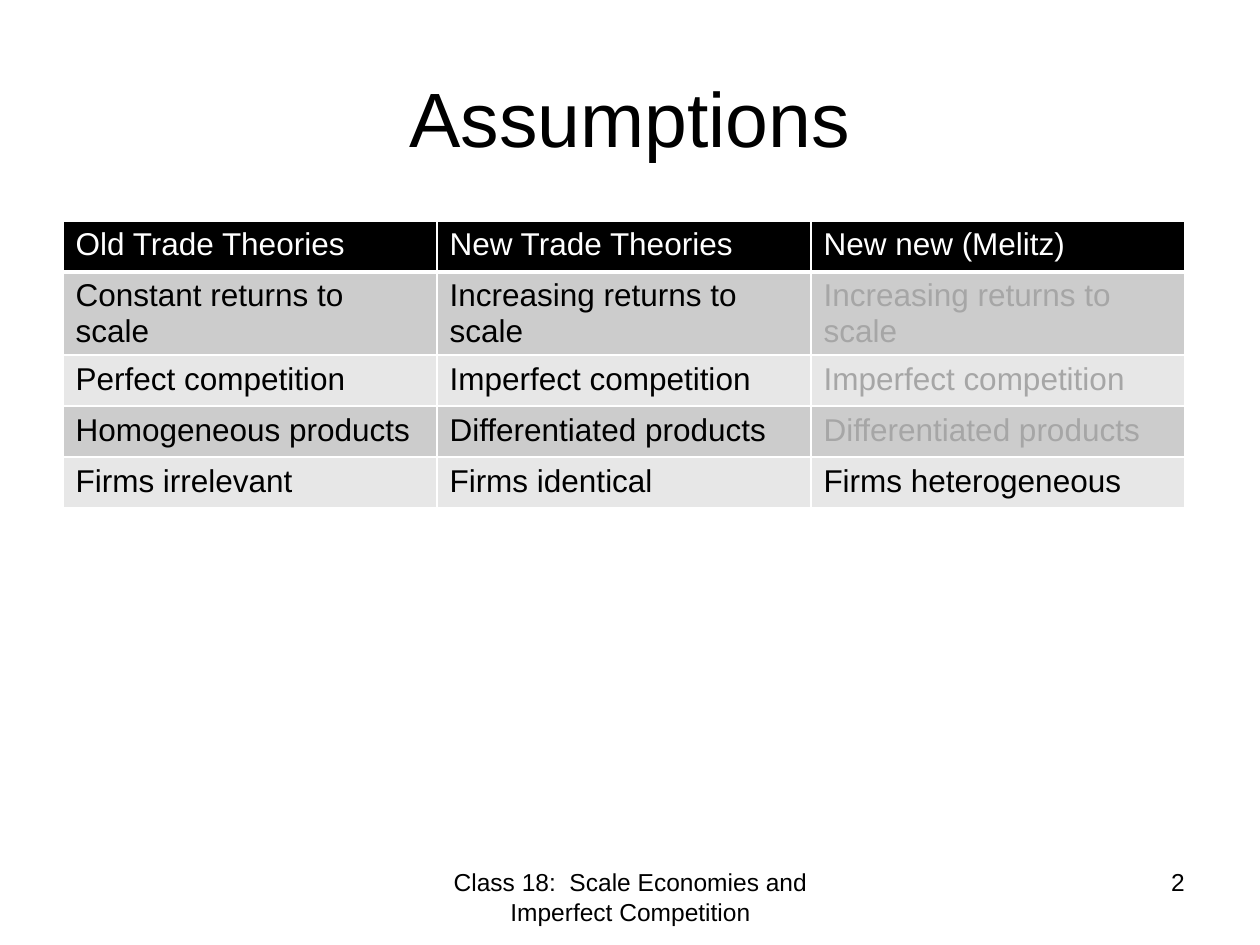
from lxml import etree
from pptx import Presentation
from pptx.dml.color import RGBColor
from pptx.enum.text import MSO_ANCHOR, PP_ALIGN
from pptx.oxml.ns import qn
from pptx.util import Emu, Pt

MIDDLE = MSO_ANCHOR.MIDDLE
LEFT, CENTER, RIGHT = PP_ALIGN.LEFT, PP_ALIGN.CENTER, PP_ALIGN.RIGHT
SCALE = 914400 / 126
FONT = "Arial"
COLORS = {
    "black": "000000",
    "white": "FFFFFF",
    "dark": "CCCCCC",
    "light": "E7E7E7",
    "muted": "A6A6A6",
}
ROWS = [
    ["Old Trade Theories", "New Trade Theories", "New new (Melitz)"],
    ["Constant returns to scale", "Increasing returns to scale",
     "Increasing returns to scale"],
    ["Perfect competition", "Imperfect competition", "Imperfect competition"],
    ["Homogeneous products", "Differentiated products",
     "Differentiated products"],
    ["Firms irrelevant", "Firms identical", "Firms heterogeneous"],
]
COL_W, ROW_H = 374, 51


def px(num):
    return Emu(round(num * SCALE))


def rgb(name):
    return RGBColor.from_string(COLORS[name])


def put_text(frame, text, size, color="black", align=LEFT):
    frame.text = text
    frame.word_wrap = True
    para = frame.paragraphs[0]
    para.alignment = align
    font = para.font
    font.name, font.size, font.bold = FONT, Pt(size), False
    font.color.rgb = rgb(color)


def add_title(slide, text):
    title = slide.shapes.title
    title.left, title.top, title.width, title.height = map(
        px, (63, 38, 1134, 158))
    put_text(title.text_frame, text, 44, align=CENTER)
    title.text_frame.vertical_anchor = MIDDLE


def add_note(slide, text, left, width, align):
    box = slide.shapes.add_textbox(px(left), px(861), px(width), px(66))
    put_text(box.text_frame, text, 14, align=align)


def set_edges(cell, base):
    """Draw white cell borders, with the bottom one base points wide."""
    props = cell._tc.get_or_add_tcPr()
    for side, width in (("L", 1), ("R", 1), ("T", 1), ("B", base)):
        line = etree.SubElement(props, qn(f"a:ln{side}"), w=str(Pt(width)))
        fill = etree.SubElement(line, qn("a:solidFill"))
        etree.SubElement(fill, qn("a:srgbClr"), val=COLORS["white"])


def fill_cell(cell, text, ink, back, base):
    put_text(cell.text_frame, text, 18, ink)
    set_edges(cell, base)
    cell.fill.solid()
    cell.fill.fore_color.rgb = rgb(back)


def add_grid(slide, rows):
    """Build the table; a cell that repeats its left neighbour is muted."""
    count = len(rows[0])
    table = slide.shapes.add_table(
        len(rows), count, px(63), px(221),
        px(COL_W * count), px(ROW_H * len(rows))).table
    for col in table.columns:
        col.width = px(COL_W)
    for r, row in enumerate(rows):
        table.rows[r].height = px(ROW_H)
        for c, text in enumerate(row):
            if r == 0:
                ink, back, base = "white", "black", 3
            else:
                same = c > 0 and text == row[c - 1]
                ink = "muted" if same else "black"
                back, base = "dark" if r % 2 else "light", 1
            fill_cell(table.cell(r, c), text, ink, back, base)


def main():
    prs = Presentation()
    prs.slide_width, prs.slide_height = px(1260), px(945)
    slide = prs.slides.add_slide(prs.slide_layouts[5])
    add_title(slide, "Assumptions")
    add_grid(slide, ROWS)
    add_note(slide, "Class 18:  Scale Economies and Imperfect Competition",
             431, 399, CENTER)
    add_note(slide, "2", 903, 294, RIGHT)
    prs.save("out.pptx")


if __name__ == "__main__":
    main()
